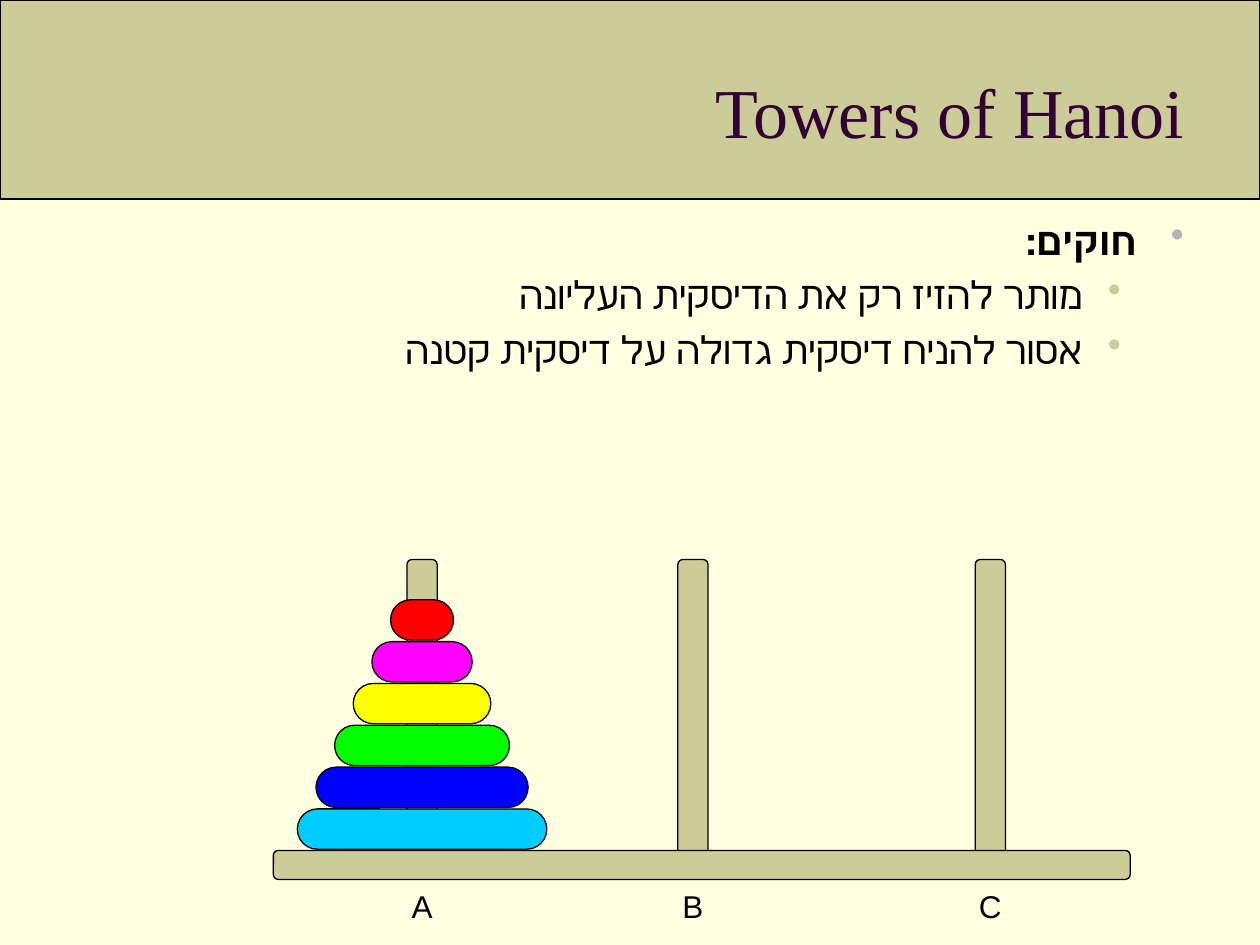
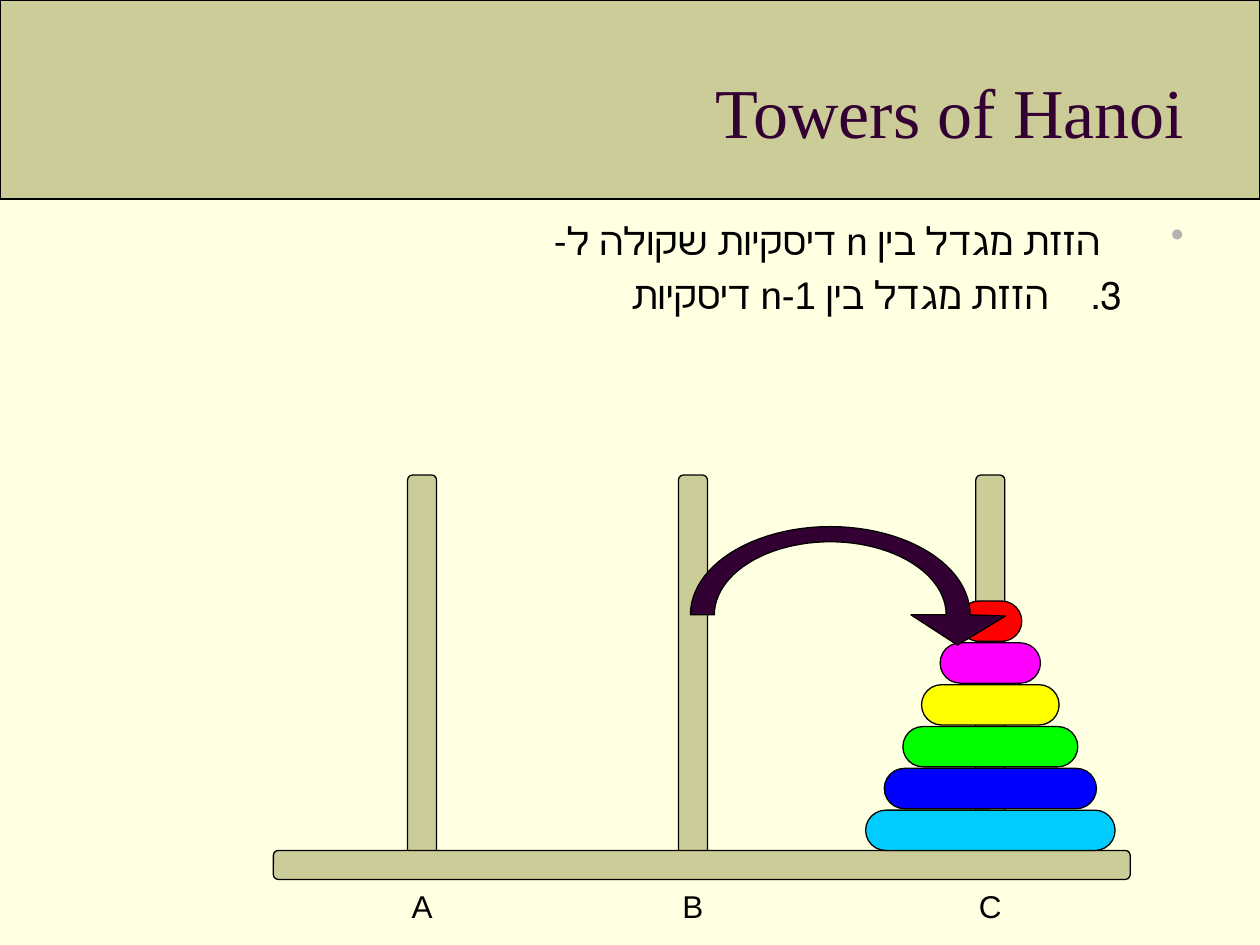
import math
import pptx
import pptx.util
import pptx.dml.color
import pptx.enum.shapes
import pptx.enum.text
import pptx.oxml.ns
from lxml import etree

Inches, Pt = pptx.util.Inches, pptx.util.Pt
RGBColor = pptx.dml.color.RGBColor
MSO_SHAPE = pptx.enum.shapes.MSO_SHAPE
ALIGN = pptx.enum.text.PP_ALIGN
ANCHOR = pptx.enum.text.MSO_ANCHOR
qn = pptx.oxml.ns.qn

# Colours
CREAM = RGBColor(0xFF, 0xFF, 0xE1)
KHAKI = RGBColor(0xCC, 0xCC, 0x99)
PLUM = RGBColor(0x33, 0x00, 0x33)
GREY = RGBColor(0xB2, 0xB2, 0xB2)
BLACK = RGBColor(0x00, 0x00, 0x00)

# Content: each line is text, level, margin, hang, bullet colour, bullet, bold
TITLE = "Towers of Hanoi"
DOT = ("buChar", {"char": "•"})
THREE = ("buAutoNum", {"type": "arabicPeriod", "startAt": "3"})
RULES = [
    ("חוקים:", 0, 0.38, 0.38, GREY, DOT, True),
    ("מותר להזיז רק את הדיסקית העליונה", 1, 0.81, 0.31, KHAKI, DOT, False),
    ("אסור להניח דיסקית גדולה על דיסקית קטנה", 1, 0.81, 0.31, KHAKI, DOT, False),
]
STEPS = [
    ("הזזת מגדל בין n דיסקיות שקולה ל-", 0, 0.67, 0.67, GREY, DOT, False),
    ("הזזת מגדל בין n-1 דיסקיות", 1, 1.08, 0.58, BLACK, THREE, False),
]
PEGS = {"A": 3.35, "B": 5.5, "C": 7.86}
DISKS = [RGBColor.from_string(c) for c in
         ("00CCFF", "0000FF", "00FF00", "FFFF00", "FF00FF", "FF0000")]
# Lines, peg height, peg width, peg that holds the disks, top of lowest disk, move
SCENES = [
    (RULES, 2.45, 0.24, "A", 6.42, False),
    (STEPS, 3.12, 0.23, "C", 6.43, True),
]
FOOT = 6.89  # lower end of the pegs


def paint(shape, fill):
    shape.shadow.inherit = False
    shape.fill.solid()
    shape.fill.fore_color.rgb = fill
    shape.line.color.rgb = BLACK
    shape.line.width = Pt(0.75)


def block(slide, x, y, w, h, fill, round=None):
    kind = MSO_SHAPE.RECTANGLE if round is None else MSO_SHAPE.ROUNDED_RECTANGLE
    shape = slide.shapes.add_shape(kind, Inches(x), Inches(y), Inches(w), Inches(h))
    if round is not None:
        shape.adjustments[0] = round
    paint(shape, fill)
    return shape


def textbox(slide, x, y, w, h):
    frame = slide.shapes.add_textbox(
        Inches(x), Inches(y), Inches(w), Inches(h)).text_frame
    frame.word_wrap = True
    return frame


def style(para, size, name, color, align, bold=False):
    para.alignment = align
    for run in para.runs:
        font = run.font
        font.size, font.name, font.bold = Pt(size), name, bold
        font.color.rgb = color


def heading(slide):
    frame = textbox(slide, 0.5, 0.25, 9, 1.25)
    frame.vertical_anchor = ANCHOR.MIDDLE
    frame.text = TITLE
    para = frame.paragraphs[0]
    para._p.get_or_add_pPr().set("rtl", "1")
    style(para, 40, "Times New Roman", PLUM, ALIGN.RIGHT)


def bullets(slide, lines):
    frame = textbox(slide, 0.5, 1.67, 9, 5.33)
    for i, (text, level, margin, hang, color, mark, bold) in enumerate(lines):
        para = frame.add_paragraph() if i else frame.paragraphs[0]
        para.text = text
        para.level = level
        props = para._p.get_or_add_pPr()
        props.set("rtl", "1")
        props.set("marL", str(Inches(margin)))
        props.set("indent", str(-Inches(hang)))
        tint = etree.SubElement(props, qn("a:buClr"))
        etree.SubElement(tint, qn("a:srgbClr"), val=str(color))
        tag, attrs = mark
        etree.SubElement(props, qn("a:" + tag), attrs)
        if i:
            para.space_before = Pt(5)
        style(para, 22, "Arial", BLACK, ALIGN.RIGHT, bold)


def pegs(slide, high, wide):
    for mid in PEGS.values():
        peg = block(slide, mid - high / 2, FOOT - high / 2 - wide / 2,
                    high, wide, KHAKI, 0.167)
        peg.rotation = 270


def tower(slide, mid, low):
    for i, color in enumerate(DISKS):
        wide = 1.98 - 0.296 * i
        block(slide, mid - wide / 2, low - 0.332 * i, wide, 0.32, color, 0.5)


def labels(slide):
    for name, mid in PEGS.items():
        frame = textbox(slide, mid - 0.38, 6.99, 0.76, 0.4)
        frame.text = name
        style(frame.paragraphs[0], 18, "Arial", BLACK, ALIGN.CENTER)


def arch(wide, high, turn):
    """Points of a half ellipse, from left to right if turn is 1."""
    return [(6.59 - turn * wide * math.cos(math.pi * k / 48),
             4.88 - high * math.sin(math.pi * k / 48)) for k in range(49)]


def arrow(slide):
    head = [(7.98, 4.89), (7.6, 5.12), (7.23, 4.88)]
    points = arch(1.11, 0.7, 1) + head + arch(0.92, 0.58, -1)
    points = [(Inches(x), Inches(y)) for x, y in points]
    build = slide.shapes.build_freeform(*points[0])
    build.add_line_segments(points[1:], close=True)
    paint(build.convert_to_shape(), PLUM)


def main():
    deck = pptx.Presentation()
    deck.slide_width, deck.slide_height = Inches(10), Inches(7.5)
    for lines, high, wide, peg, low, move in SCENES:
        slide = deck.slides.add_slide(deck.slide_layouts[6])
        slide.background.fill.solid()
        slide.background.fill.fore_color.rgb = CREAM
        # Title band, pegs and text
        block(slide, 0, 0, 10, 1.58, KHAKI)
        pegs(slide, high, wide)
        heading(slide)
        bullets(slide, lines)
        # Base, disks and peg names
        block(slide, 2.17, 6.75, 6.8, 0.23, KHAKI, 0.167)
        tower(slide, PEGS[peg], low)
        labels(slide)
        if move:
            arrow(slide)
    deck.save("out.pptx")


if __name__ == "__main__":
    main()
